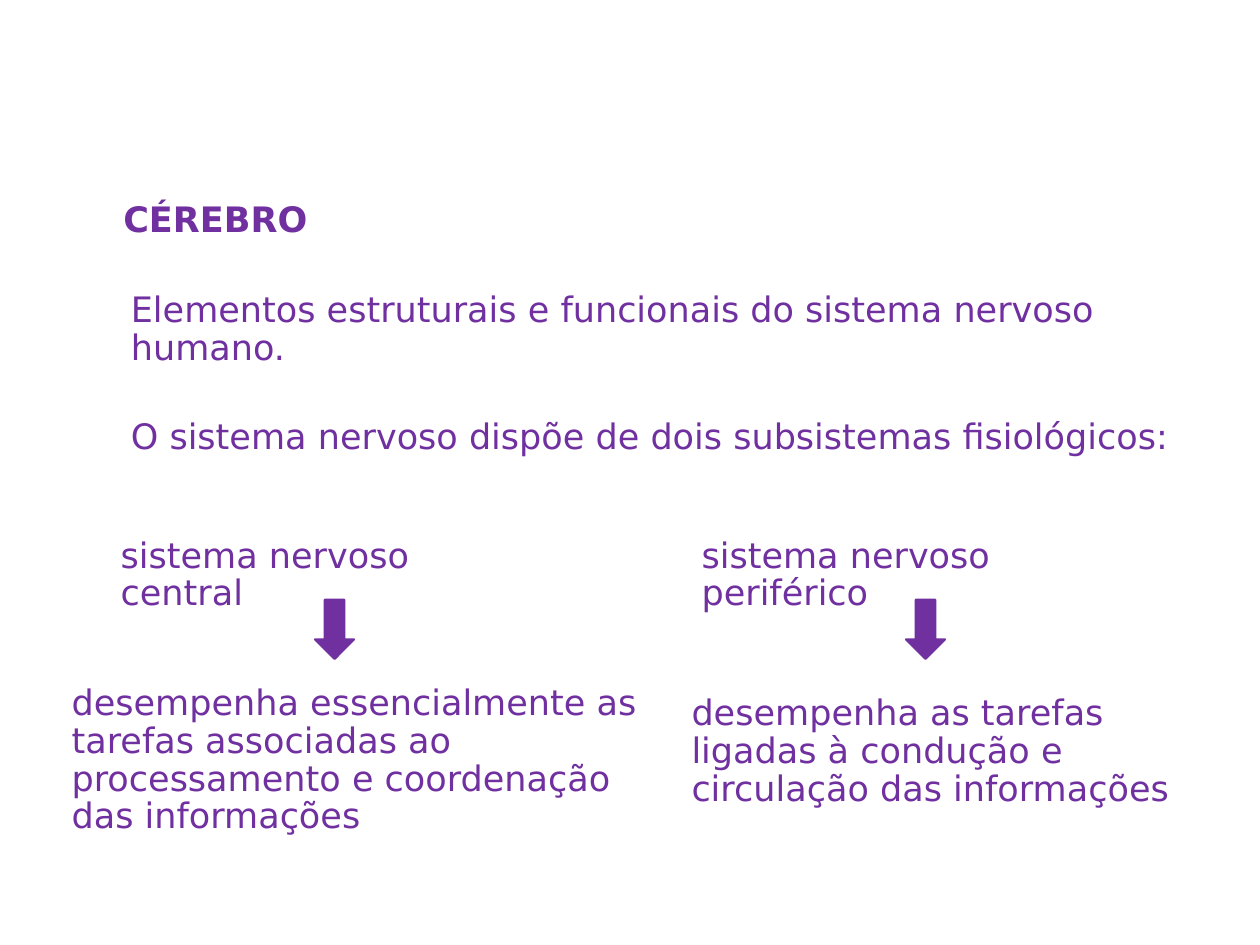
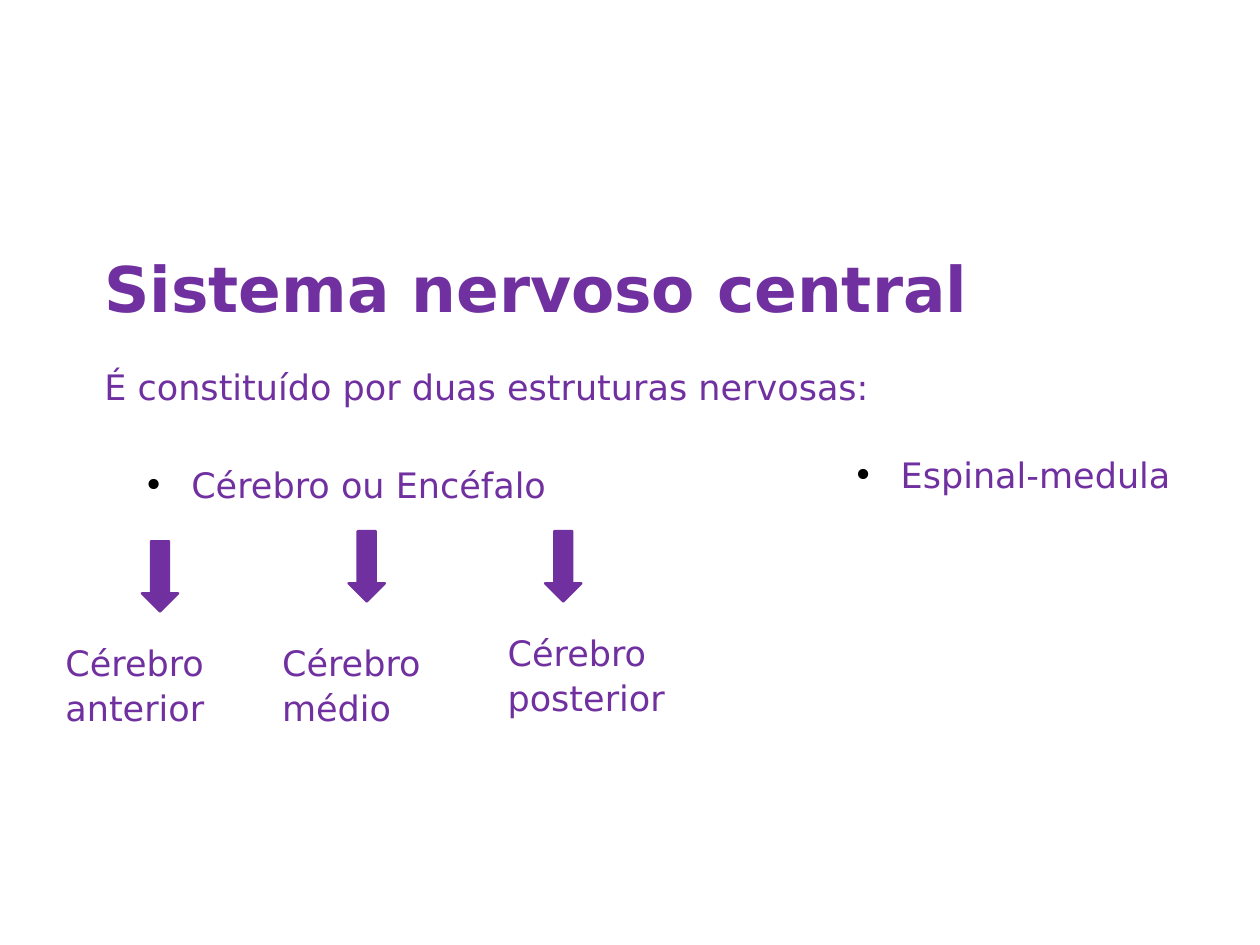
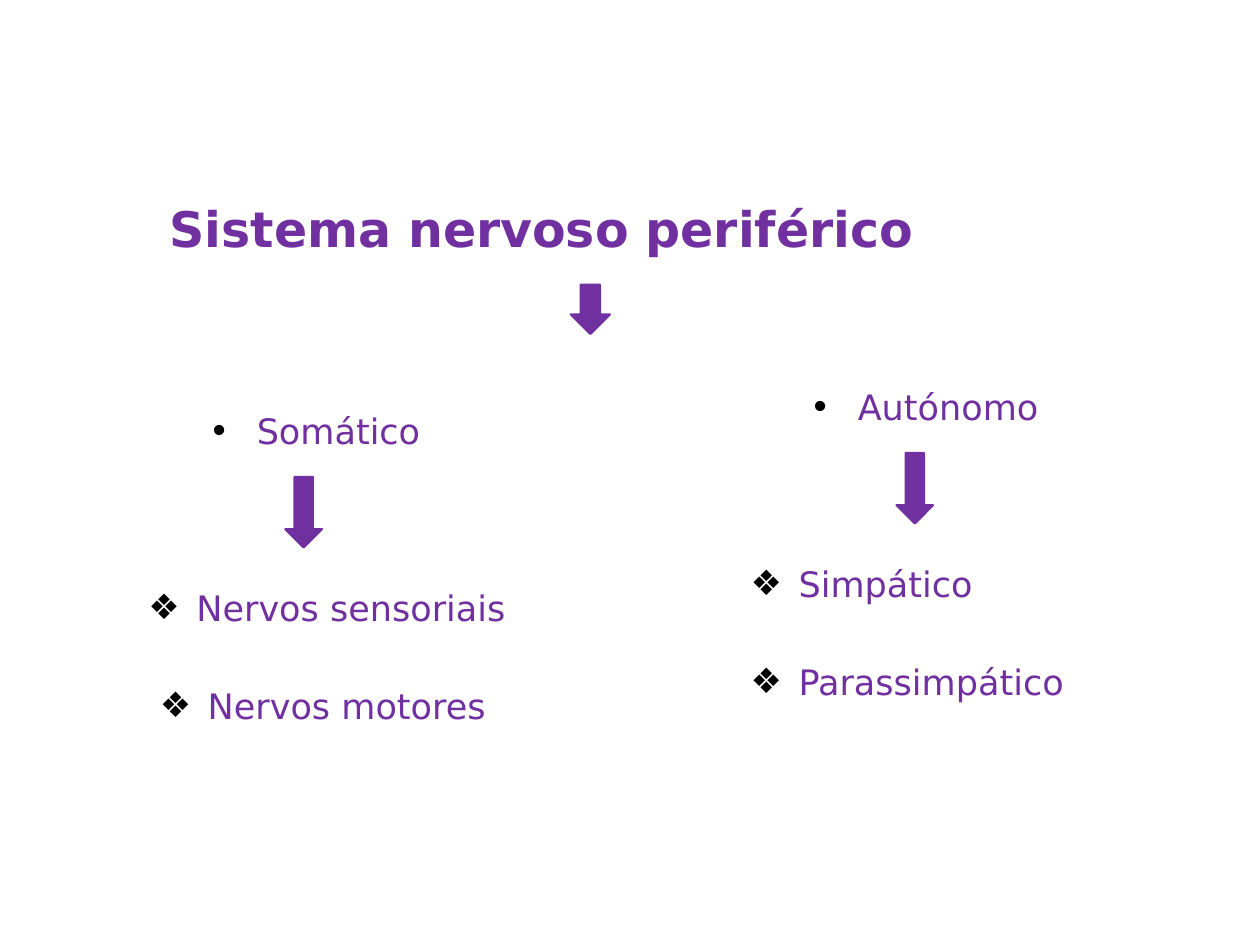
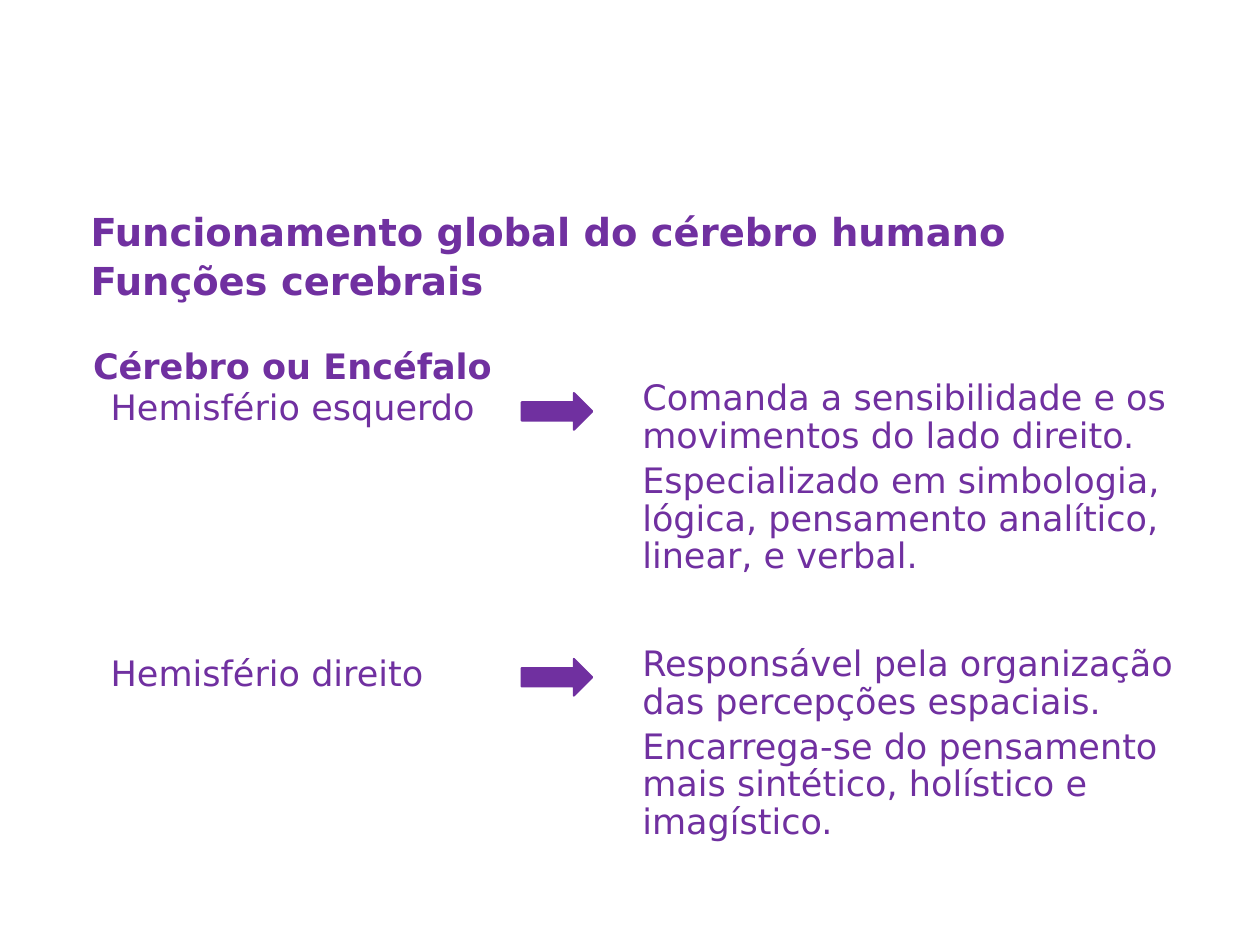
from lxml.etree import SubElement
from pptx import Presentation
from pptx.dml.color import RGBColor
from pptx.enum.shapes import MSO_SHAPE
from pptx.enum.text import MSO_AUTO_SIZE, PP_ALIGN
from pptx.oxml.ns import qn
from pptx.util import Inches, Pt

# Shared look
INK = {"text": "7030A0", "dot": "000000"}
FACE = "DejaVu Sans"
BODY = 20
DOT, GEM = "•", "❖"

deck = Presentation()
deck.slide_width, deck.slide_height = Inches(10), Inches(7.5)
COL = deck.slide_width / 100
ROW = deck.slide_height / 75
blank = deck.slide_layouts[6]


def write(page, x, y, w, h, *lines, size=BODY, bold=False, wrap=True,
          mark=None, align=PP_ALIGN.LEFT):
    """Put lines of text in a box placed in grid columns and rows."""
    box = page.shapes.add_textbox(int(x * COL), int(y * ROW), int(w * COL), int(h * ROW))
    frame = box.text_frame
    frame.word_wrap = wrap
    frame.auto_size = MSO_AUTO_SIZE.SHAPE_TO_FIT_TEXT
    for i, line in enumerate(lines):
        para = frame.paragraphs[0] if i == 0 else frame.add_paragraph()
        para.text = line
        para.alignment = align
        para.line_spacing = 0.9
        para.space_before = Pt(size * 0.2 if i else 0)
        if mark:
            props = para._p.get_or_add_pPr()
            props.set("marL", str(Inches(0.38)))
            props.set("indent", str(-Inches(0.38)))
            tint = SubElement(props, qn("a:buClr"))
            SubElement(tint, qn("a:srgbClr"), val=INK["dot"])
            SubElement(props, qn("a:buFont"), typeface=FACE)
            SubElement(props, qn("a:buChar"), char=mark)
        font = para.font
        font.name, font.size, font.bold = FACE, Pt(size), bold
        font.color.rgb = RGBColor.from_string(INK["text"])


def point(page, x, y, w=5.6, h=2.9, turn=90):
    """Draw a block arrow, turned downwards by default."""
    arrow = page.shapes.add_shape(MSO_SHAPE.RIGHT_ARROW, int(x * COL), int(y * ROW),
                                  int(w * COL), int(h * ROW))
    arrow.rotation = turn
    arrow.shadow.inherit = False
    arrow.fill.solid()
    arrow.fill.fore_color.rgb = RGBColor.from_string(INK["text"])
    arrow.line.color.rgb = RGBColor.from_string(INK["text"])
    arrow.line.width = Pt(1.25)


# Slide 1: the brain and its two subsystems
page = deck.slides.add_slide(blank)
write(page, 8.8, 15.6, 30.2, 7.7, "CÉREBRO", bold=True)
write(page, 9.4, 22.7, 80.5, 7,
      "Elementos estruturais e funcionais do sistema nervoso humano.")
write(page, 9.4, 32.8, 90.6, 4,
      "O sistema nervoso dispõe de dois subsistemas fisiológicos:")
for x, name in ((8.6, "central"), (54.7, "periférico")):
    write(page, x, 42.2, 35, 7, f"sistema nervoso {name}")
for x in (24.2, 71.1):
    point(page, x, 48.4, 4.7, 3.1)
write(page, 4.7, 53.9, 48.4, 13,
      "desempenha essencialmente as tarefas associadas ao "
      "processamento e coordenação das informações")
write(page, 53.9, 54.7, 43, 10,
      "desempenha as tarefas ligadas à condução e circulação das informações")

# Slide 2: central nervous system
page = deck.slides.add_slide(blank)
write(page, 7.3, 20, 80.5, 6.5, "Sistema nervoso central", size=36, bold=True)
write(page, 7.3, 28.9, 89.8, 4.1, "É constituído por duas estruturas nervosas:")
for x, y, w, part in ((10.4, 36.7, 35, "Cérebro ou Encéfalo"),
                      (66.7, 35.9, 28.5, "Espinal-medula")):
    write(page, x, y, w, 4, part, mark=DOT)
for x, tip, y, w, part in ((4.2, 9.9, 50.8, 13.2, "anterior"),
                           (21.4, 26.3, 50.8, 13.2, "médio"),
                           (39.3, 41.9, 50, 14.9, "posterior")):
    write(page, x, y, w, 7.8, "Cérebro", part, wrap=False)
    point(page, tip, 44.3 if part == "anterior" else 43.5)

# Slide 3: peripheral nervous system
page = deck.slides.add_slide(blank)
write(page, 2, 15.8, 81.9, 5.2, "Sistema nervoso periférico",
      size=28, bold=True, align=PP_ALIGN.CENTER)
point(page, 44.9, 23, 3.9, 3.1)
for x, y, w, tip, name, kinds in (
        (15.6, 32.4, 20, 21.3, "Somático",
         ((10.8, 31.5, "Nervos sensoriais"), (11.7, 29, "Nervos motores"))),
        (63.3, 30.5, 21, 69.8, "Autónomo",
         ((58.6, 20.5, "Simpático"), (58.6, 28, "Parassimpático")))):
    write(page, x, y, w, 4, name, mark=DOT)
    point(page, tip, y + 6.8)
    for i, (left, wide, kind) in enumerate(kinds):
        write(page, left, y + 14 + 7.8 * i, wide, 4, kind, mark=GEM)

# Slide 4: what each hemisphere does
page = deck.slides.add_slide(blank)
write(page, 6.2, 16.4, 89.1, 8.4, "Funcionamento global do cérebro humano",
      "Funções cerebrais", size=22, bold=True)
write(page, 6.4, 27.2, 33.7, 4, "Cérebro ou Encéfalo", bold=True, wrap=False)
for y, side, tasks in (
        (29.7, "esquerdo",
         ("Comanda a sensibilidade e os movimentos do lado direito.",
          "Especializado em simbologia, lógica, pensamento analítico, linear, e verbal.")),
        (50.8, "direito",
         ("Responsável pela organização das percepções espaciais.",
          "Encarrega-se do pensamento mais sintético, holístico e imagístico."))):
    write(page, 7.8, y + 0.8, 33.6, 4.1, f"Hemisfério {side}")
    point(page, 41.4, y + 1.5, turn=0)
    write(page, 50, y, 48.4, 17, *tasks)

deck.save("out.pptx")
